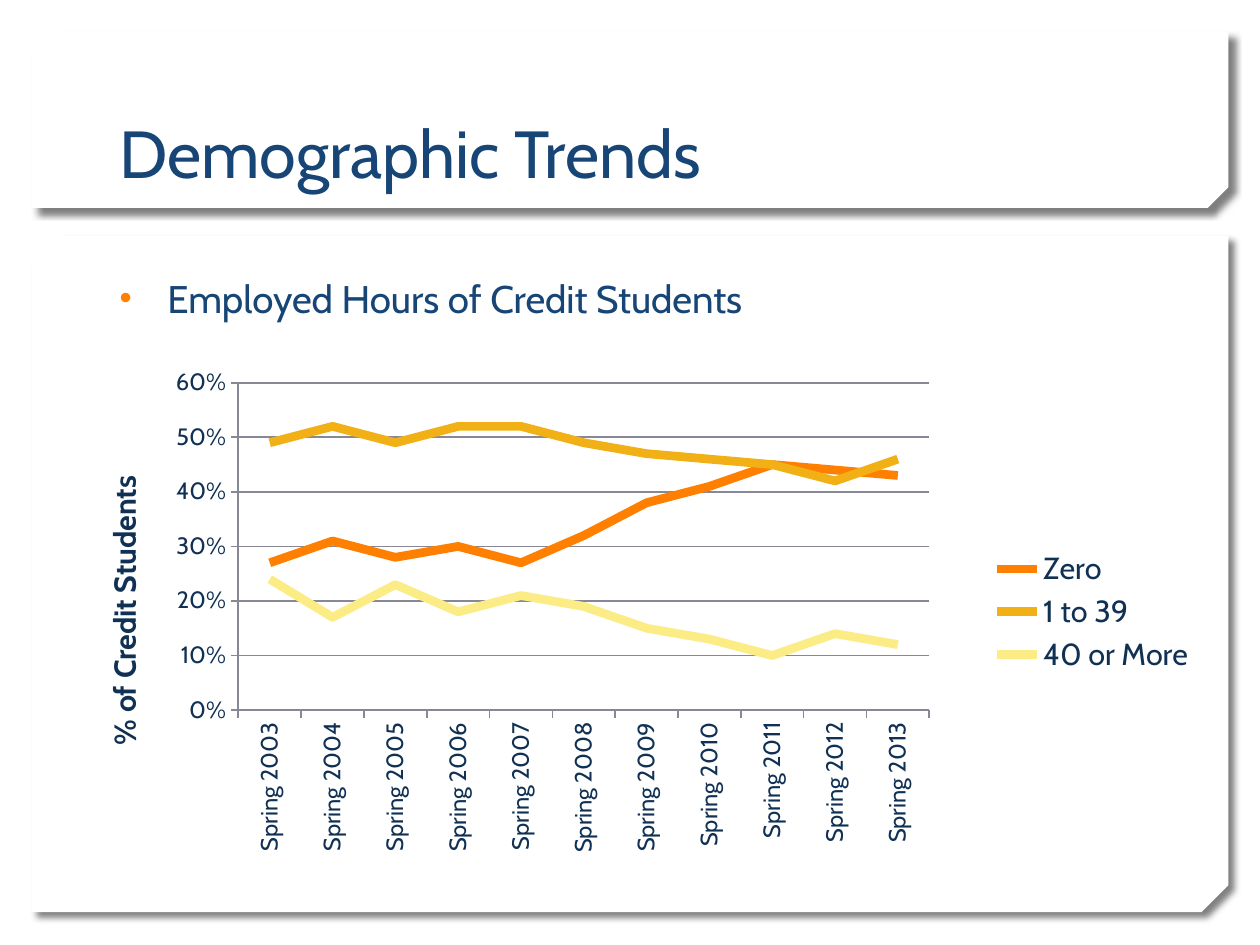
from lxml import etree
from pptx import Presentation
from pptx.chart.data import CategoryChartData
from pptx.dml.color import RGBColor
from pptx.enum.chart import XL_CHART_TYPE, XL_LEGEND_POSITION, XL_TICK_MARK
from pptx.enum.shapes import MSO_SHAPE
from pptx.enum.text import MSO_ANCHOR
from pptx.oxml import parse_xml
from pptx.oxml.ns import nsdecls, qn
from pptx.util import Inches, Pt

LINE = XL_CHART_TYPE.LINE
RIGHT = XL_LEGEND_POSITION.RIGHT
OUTSIDE = XL_TICK_MARK.OUTSIDE
SNIP = MSO_SHAPE.SNIP_2_DIAG_RECTANGLE
TOP, BOTTOM = MSO_ANCHOR.TOP, MSO_ANCHOR.BOTTOM

FONT = "Cabin"
WHITE = RGBColor(0xFF, 0xFF, 0xFF)
BLUE = RGBColor(0x17, 0x45, 0x76)
NAVY = RGBColor(0x10, 0x31, 0x54)
GRAY = RGBColor(0x87, 0x87, 0x96)
ORANGE = RGBColor(0xFF, 0x7F, 0x01)
GOLD = RGBColor(0xF1, 0xB0, 0x15)
YELLOW = RGBColor(0xFB, 0xEC, 0x85)

prs = Presentation()
prs.slide_width, prs.slide_height = Inches(10), Inches(7.5)
s = prs.slides.add_slide(prs.slide_layouts[6])

# Panels with snipped corners and a soft shadow
for top, height, snip in [(1.87, 5.37, 0.04), (0.25, 1.4, 0.117)]:
    sp = s.shapes.add_shape(SNIP, Inches(0.25), Inches(top), Inches(9.5), Inches(height))
    sp.adjustments[0], sp.adjustments[1] = 0, snip
    sp.fill.solid()
    sp.fill.fore_color.rgb = WHITE
    sp.line.fill.background()
    sp._element.spPr.find(qn("a:xfrm")).set("flipV", "1")
    sp._element.spPr.append(parse_xml(
        f'<a:effectLst {nsdecls("a")}><a:outerShdw blurRad="{Pt(4)}" dist="{Pt(5)}" '
        'dir="2700000" algn="tl" rotWithShape="0"><a:srgbClr val="000000">'
        '<a:alpha val="50000"/></a:srgbClr></a:outerShdw></a:effectLst>'))

# Title and bullet line
for text, top, height, size, anchor in [
        ("Demographic Trends", 0.32, 1.25, 38, BOTTOM),
        ("Employed Hours of Credit Students", 2.13, 0.6, 22, TOP)]:
    tf = s.shapes.add_textbox(Inches(0.85), Inches(top), Inches(8.29), Inches(height)).text_frame
    tf.word_wrap = True
    tf.vertical_anchor = anchor
    p = tf.paragraphs[0]
    p.text = text
    font = p.runs[0].font
    font.name, font.size, font.color.rgb = FONT, Pt(size), BLUE

# The last paragraph is the bullet
p.space_before = Pt(20)
pPr = p._p.get_or_add_pPr()
pPr.set("marL", str(Inches(0.38)))
pPr.set("indent", str(-Inches(0.38)))
color = etree.SubElement(pPr, qn("a:buClr"))
etree.SubElement(color, qn("a:srgbClr")).set("val", str(ORANGE))
etree.SubElement(pPr, qn("a:buSzPct")).set("val", "90000")
etree.SubElement(pPr, qn("a:buFont")).set("typeface", "Arial")
etree.SubElement(pPr, qn("a:buChar")).set("char", "•")

# Chart data
hours = [
    ("Zero", ORANGE, [0.27, 0.31, 0.28, 0.3, 0.27, 0.32, 0.38, 0.41, 0.45, 0.44, 0.43]),
    ("1 to 39", GOLD, [0.49, 0.52, 0.49, 0.52, 0.52, 0.49, 0.47, 0.46, 0.45, 0.42, 0.46]),
    ("40 or More", YELLOW, [0.24, 0.17, 0.23, 0.18, 0.21, 0.19, 0.15, 0.13, 0.1, 0.14, 0.12]),
]
data = CategoryChartData(number_format="0%")
data.categories = [f"Spring {year}" for year in range(2003, 2014)]
for name, _, values in hours:
    data.add_series(name, values)

# Line chart
chart = s.shapes.add_chart(LINE, Inches(0.48), Inches(2.84), Inches(9.11), Inches(4.03), data).chart
chart.has_title = False
chart.font.name, chart.font.size, chart.font.color.rgb = FONT, Pt(17.4), NAVY
chart.has_legend = True
chart.legend.position = RIGHT
chart.legend.include_in_layout = False
for series, (_, color, _) in zip(chart.plots[0].series, hours):
    series.smooth = False
    series.format.line.color.rgb = color
    series.format.line.width = Pt(5)

# Axes
cat, val = chart.category_axis, chart.value_axis
for axis in (cat, val):
    axis.major_tick_mark = OUTSIDE
    font = axis.tick_labels.font
    font.name, font.size, font.color.rgb = FONT, Pt(13.5), NAVY
    axis.format.line.color.rgb = GRAY
    axis.format.line.width = Pt(1)
cat._element.find(qn("c:txPr")).find(qn("a:bodyPr")).set("rot", "-5400000")
val.minimum_scale, val.maximum_scale, val.major_unit = 0, 0.6, 0.1
val.tick_labels.number_format = "0%"
val.tick_labels.number_format_is_linked = False
val.has_major_gridlines = True
val.major_gridlines.format.line.color.rgb = GRAY
val.major_gridlines.format.line.width = Pt(1)
tf = val.axis_title.text_frame
tf.text = "% of Credit Students"
tf._txBody.find(qn("a:bodyPr")).set("rot", "-5400000")
font = tf.paragraphs[0].runs[0].font
font.name, font.size, font.bold, font.color.rgb = FONT, Pt(17.4), True, NAVY

# Inner plot area as shares of the chart
plot_area = chart._chartSpace.chart.plotArea
for old in plot_area.findall(qn("c:layout")):
    plot_area.remove(old)
layout = etree.Element(qn("c:layout"))
manual = etree.SubElement(layout, qn("c:manualLayout"))
for tag, value in [("layoutTarget", "inner"), ("xMode", "edge"), ("yMode", "edge"),
                   ("x", "0.155"), ("y", "0.049"), ("w", "0.602"), ("h", "0.645")]:
    etree.SubElement(manual, qn(f"c:{tag}")).set("val", value)
plot_area.insert(0, layout)

prs.save("out.pptx")
